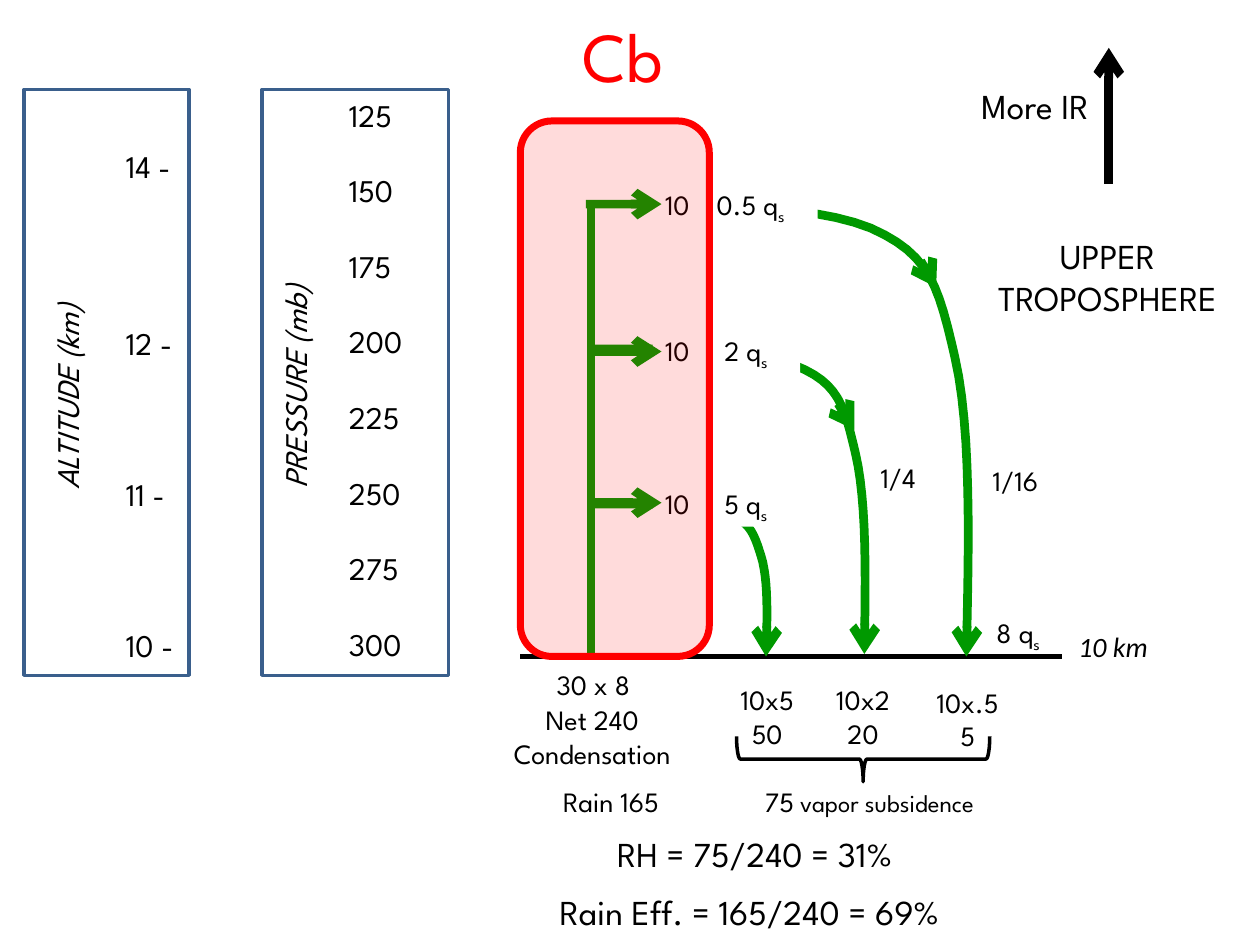
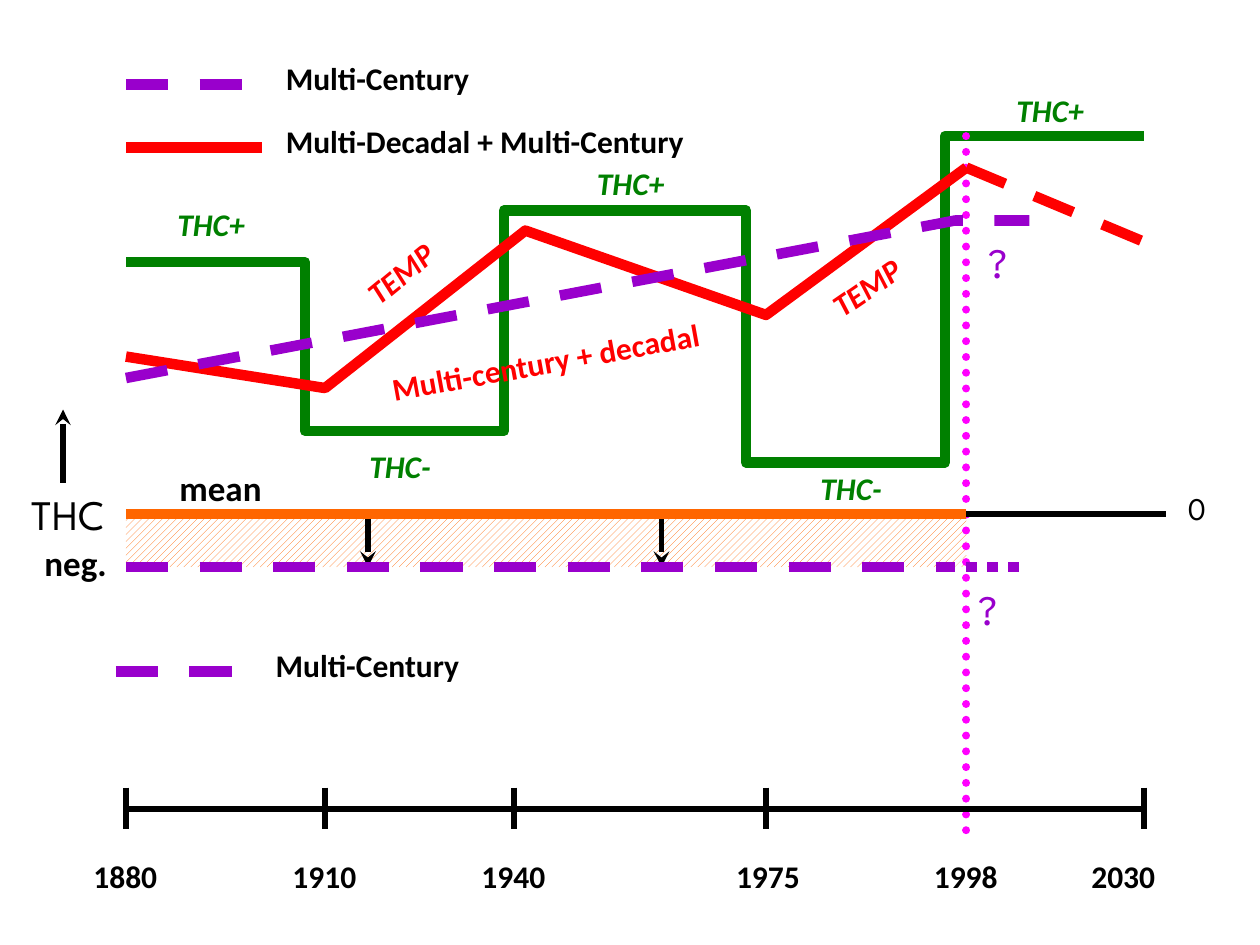
from lxml import etree
from pptx import Presentation
from pptx.dml.color import RGBColor
from pptx.enum import dml, shapes, text
from pptx.oxml.ns import qn
from pptx.util import Cm, Pt

INCH = 2.54
SPARTAN, CALIBRI = "League Spartan", "Calibri"
BLACK, WHITE, RED, GREEN = "000000", "FFFFFF", "FF0000", "009900"
THC_GREEN, PURPLE, ORANGE, PINK, FRAME_BLUE = "008000", "9900CC", "FF6600", "FF00FF", "3A5F8C"
DASH, DOT = dml.MSO_LINE.DASH, dml.MSO_LINE.ROUND_DOT
LEFT, CENTER = text.PP_ALIGN.LEFT, text.PP_ALIGN.CENTER
rgb = RGBColor.from_string


def add_label(page, frame, words, size=16, colour=BLACK, font=SPARTAN, align=CENTER,
              bold=False, italic=False, fill=None, turn=0, gaps=(), tab=None):
    """Place text given in inches; newline splits paragraphs, "_" starts a subscript."""
    box = page.shapes.add_textbox(*[Cm(v * INCH) for v in frame])
    box.rotation = turn
    if fill:
        box.fill.solid()
        box.fill.fore_color.rgb = rgb(fill)
    box.text_frame.word_wrap = True
    box.text_frame.auto_size = text.MSO_AUTO_SIZE.SHAPE_TO_FIT_TEXT
    for row, line in enumerate(words.split("\n")):
        para = box.text_frame.add_paragraph() if row else box.text_frame.paragraphs[0]
        para.alignment = align
        if row and gaps:
            para.space_before = Pt(gaps[row - 1])
        if tab:
            stops = etree.SubElement(para._p.get_or_add_pPr(), qn("a:tabLst"))
            etree.SubElement(stops, qn("a:tab"), pos=str(Cm(tab * INCH)), algn="l")
        main, _, subscript = line.partition("_")
        para.add_run().text = main
        if subscript:
            span = para.add_run()
            span.text = subscript
            span.font._element.set("baseline", "-25000")
        para.font.name, para.font.size = font, Pt(size)
        para.font.bold, para.font.italic = bold, italic
        para.font.color.rgb = rgb(colour)
    return box


def draw(page, points, colour, width, dash=None, arrow=None, cap=None):
    """Draw a connector for two points in inches, an open outline for more."""
    spots = [(Cm(x * INCH), Cm(y * INCH)) for x, y in points]
    if len(spots) == 2:
        stroke = page.shapes.add_connector(shapes.MSO_CONNECTOR.STRAIGHT, *spots[0], *spots[1])
    else:
        builder = page.shapes.build_freeform(*spots[0])
        builder.add_line_segments(spots[1:], close=False)
        stroke = builder.convert_to_shape()
        stroke.fill.background()
    stroke.line.color.rgb = rgb(colour)
    stroke.line.width = Pt(width)
    if dash:
        stroke.line.dash_style = dash
    props = stroke._element.spPr
    outline = props.find(qn("a:ln"))
    if arrow:
        etree.SubElement(outline, qn("a:tailEnd"), type=arrow)
    if cap:
        outline.set("cap", cap)
    etree.SubElement(props, qn("a:effectLst"))


deck = Presentation()
deck.slide_width, deck.slide_height = Cm(25.4), Cm(19.05)
blank = deck.slide_layouts[6]

# Slide 1: cumulonimbus moisture budget
page = deck.slides.add_slide(blank)

add_label(page, (2.67, 0.71, 0.75, 4.64), "\n".join(str(mb) for mb in range(125, 301, 25)),
          18, align=LEFT, gaps=[21.6] * 7)
add_label(page, (0.9, 1.12, 0.75, 4.34), "14 -\n12 -\n11 -\n10 -", 18, align=LEFT,
          gaps=[79.2, 64.8, 64.8])
for left, top, name in [(1.22, 2.65, "PRESSURE (mb)"), (-0.59, 2.66, "ALTITUDE (km)")]:
    add_label(page, (left, top, 2.25, 0.4), name, 18, align=LEFT, italic=True, turn=270)

draw(page, [(4.13, 5.21), (8.43, 5.21)], BLACK, 3)
draw(page, [(4.69, 5.21), (4.69, 1.62)], GREEN, 5)

# Each sinking path: a start point, then Bezier triples
sinking_paths = [
    [(4.71, 2.77), (5.34, 2.77), (5.97, 2.76), (6.31, 2.9), (6.66, 3.04), (6.7, 3.22),
     (6.79, 3.6), (6.88, 3.98), (6.87, 4.58), (6.86, 5.19)],
    [(4.65, 1.62), (5.53, 1.62), (6.42, 1.61), (6.91, 1.81), (7.39, 2.02), (7.45, 2.28),
     (7.58, 2.84), (7.71, 3.41), (7.69, 4.31), (7.67, 5.21)],
    [(4.7, 4), (5.1, 4), (5.51, 3.99), (5.73, 4.06), (5.95, 4.13), (5.98, 4.22),
     (6.04, 4.41), (6.1, 4.6), (6.09, 4.9), (6.08, 5.21)],
]
STEPS = 12
for knots in sinking_paths:
    curve = [knots[0]]
    for first in range(0, len(knots) - 1, 3):
        corners = knots[first:first + 4]
        for step in range(1, STEPS + 1):
            t = step / STEPS
            weights = ((1 - t) ** 3, 3 * t * (1 - t) ** 2, 3 * t * t * (1 - t), t ** 3)
            curve.append(tuple(sum(w * c[axis] for w, c in zip(weights, corners))
                               for axis in (0, 1)))
    draw(page, curve, GREEN, 5, arrow="arrow")

for top, width, outflow, tab in [(1.44, 1.31, "0.5", 0.41), (2.6, 1.17, "2", 0.47),
                                 (3.81, 1.17, "5", 0.47)]:
    add_label(page, (5.18, top, width, 0.37), f"10\t{outflow} q_s", align=LEFT, fill=WHITE, tab=tab)

for frame, words, size in [
    ((5.61, 5.37, 0.96, 0.64), "10x5\n50", 16),
    ((6.37, 5.37, 0.96, 0.64), "10x2\n20", 16),
    ((7.2, 5.39, 0.96, 0.64), "10x.5\n5", 16),
    ((4.23, 5.25, 0.96, 0.37), "30 x 8", 16),
    ((4.06, 6.18, 1.58, 0.37), "Rain 165", 16),
    ((4.13, 6.56, 3.72, 0.44), "RH = 75/240 = 31%", 20),
    ((4.05, 7.02, 3.8, 0.44), "Rain Eff. = 165/240 = 69%", 20),
]:
    add_label(page, frame, words, size, fill=WHITE)

add_label(page, (4.38, 0.05, 1.12, 0.77), "Cb", 40, RED)
add_label(page, (3.69, 5.53, 2.02, 0.64), "Net 240 Condensation")
add_label(page, (7.62, 0.62, 1.19, 0.77), "More IR", 20)
add_label(page, (7.58, 1.81, 2.42, 0.77), "UPPER TROPOSPHERE", 20)
subsidence = add_label(page, (5.64, 6.18, 2.52, 0.37), "75")
span = subsidence.text_frame.paragraphs[0].add_run()
span.text = " vapor subsidence"
span.font.size = Pt(14)
for frame, words in [((7.81, 4.84, 0.83, 0.37), "8 q_s"), ((6.89, 3.61, 0.61, 0.37), "1/4"),
                     ((7.78, 3.63, 0.78, 0.37), "1/16")]:
    add_label(page, frame, words, align=LEFT)
add_label(page, (8.46, 4.95, 1.06, 0.37), "10 km", font=CALIBRI, align=LEFT, italic=True)

for level in (1.62, 2.79, 3.99):
    draw(page, [(4.69, level), (5.25, level)], GREEN, 5, arrow="arrow")

PRESET = shapes.MSO_SHAPE
for preset, frame, colour, width in [
    (PRESET.RIGHT_BRACE, (6.67, 5.02, 0.36, 2.01), BLACK, 2),
    (PRESET.RECTANGLE, (0.19, 0.71, 1.31, 4.65), FRAME_BLUE, 2),
    (PRESET.RECTANGLE, (2.08, 0.71, 1.48, 4.65), FRAME_BLUE, 2),
    (PRESET.ROUNDED_RECTANGLE, (4.13, 0.96, 1.5, 4.25), RED, 4),
]:
    shape = page.shapes.add_shape(preset, *[Cm(v * INCH) for v in frame])
    shape.shadow.inherit = False
    shape.fill.background()
    shape.line.color.rgb = rgb(colour)
    shape.line.width = Pt(width)
    if preset == PRESET.RIGHT_BRACE:
        shape.rotation = 90
    elif preset == PRESET.ROUNDED_RECTANGLE:
        shape.fill.solid()
        shape.fill.fore_color.rgb = rgb(RED)
        tint = shape._element.spPr.find(qn("a:solidFill"))[0]
        etree.SubElement(tint, qn("a:alpha"), val="14000")

draw(page, [(7.33, 2.11), (7.43, 2.28)], GREEN, 5, arrow="arrow")
draw(page, [(6.68, 3.25), (6.78, 3.41)], GREEN, 5, arrow="arrow")
draw(page, [(8.8, 1.46), (8.8, 0.38)], BLACK, 5, arrow="arrow")

# Slide 2: THC and temperature timeline
page = deck.slides.add_slide(blank)

draw(page, [(1, 2.08), (2.42, 2.08), (2.42, 3.42), (4, 3.42), (4, 1.67), (5.92, 1.67),
            (5.92, 3.67), (7.5, 3.67), (7.5, 1.08), (9.08, 1.08)], THC_GREEN, 6)

deficit = page.shapes.add_shape(PRESET.RECTANGLE, *[Cm(v * INCH) for v in (1, 4.08, 6.67, 0.42)])
deficit.shadow.inherit = False
deficit.fill.patterned()
deficit.fill.pattern = dml.MSO_PATTERN.WIDE_UPWARD_DIAGONAL
deficit.fill.fore_color.rgb = rgb(ORANGE)
deficit.fill.back_color.rgb = rgb(WHITE)
deficit.line.fill.background()

draw(page, [(7.67, 1.08), (7.67, 6.67)], PINK, 4.5, DOT, cap="rnd")
draw(page, [(1, 6.42), (9.08, 6.42)], BLACK, 3)
for tick in (1, 2.58, 4.08, 6.08, 9.08):
    draw(page, [(tick, 6.25), (tick, 6.58)], BLACK, 3)
for middle, year in [(1, 1880), (2.58, 1910), (4.08, 1940), (6.1, 1975), (7.67, 1998), (8.92, 2030)]:
    add_label(page, (middle - 0.42, 6.75, 0.83, 0.4), str(year), 18, font=CALIBRI, bold=True)

for left, top, width, colour, dash, name in [
    (1, 0.67, 1.83, PURPLE, DASH, "Multi-Century"),
    (1, 1.17, 3.83, RED, None, "Multi-Decadal + Multi-Century"),
    (0.92, 5.33, 1.83, PURPLE, DASH, "Multi-Century"),
]:
    draw(page, [(left, top), (left + 1.08, top)], colour, 6, dash)
    add_label(page, (left + 1.17, top - 0.25, width, 0.4), name, 18,
              font=CALIBRI, align=LEFT, bold=True)

draw(page, [(7.67, 4.5), (8.17, 4.5)], PURPLE, 6, DOT)
draw(page, [(7.67, 4.08), (9.25, 4.08)], BLACK, 3)
draw(page, [(1, 2.83), (2.58, 3.08), (4.17, 1.83), (6.08, 2.5), (7.67, 1.33)], RED, 6)
for start, end in [((2.92, 4.08), (2.92, 4.5)), ((5.25, 4.08), (5.25, 4.5)),
                   ((0.5, 3.83), (0.5, 3.25))]:
    draw(page, [start, end], BLACK, 3, arrow="stealth")
draw(page, [(1, 4.5), (7.58, 4.5)], PURPLE, 6, DASH)
draw(page, [(1, 4.08), (7.67, 4.08)], ORANGE, 6)
draw(page, [(1, 3), (7.58, 1.75), (8.17, 1.75)], PURPLE, 6, DASH)
draw(page, [(7.67, 1.33), (9.08, 1.92)], RED, 6, DASH)

add_label(page, (9.33, 3.83, 0.33, 0.4), "0", 18, align=LEFT)
add_label(page, (0.08, 3.83, 0.92, 0.5), "THC", 24)
for left, top in [(7.75, 1.83), (7.67, 4.58)]:
    add_label(page, (left, top, 0.42, 0.5), "?", 24, PURPLE, align=LEFT)
for frame, words in [((1.25, 3.65, 1, 0.43), "mean"), ((0.18, 4.25, 0.84, 0.43), "neg.")]:
    add_label(page, frame, words, 20, font=CALIBRI, bold=True)
for frame, words, italic, turn in [
    ((6.25, 2.08, 1.25, 0.4), "TEMP", True, 325.5),
    ((2.67, 1.97, 1.01, 0.4), "TEMP", True, 320.6),
    ((2.83, 2.67, 3, 0.4), "Multi-century + decadal", False, 349.7),
]:
    add_label(page, frame, words, 18, RED, CALIBRI, bold=True, italic=italic, turn=turn)
for left, top, sign in [(1.17, 1.58, "+"), (4.5, 1.25, "+"), (7.83, 0.67, "+"),
                        (2.67, 3.5, "-"), (6.25, 3.67, "-")]:
    add_label(page, (left, top, 1.01, 0.4), "THC" + sign, 18, THC_GREEN, CALIBRI,
              bold=True, italic=True)

deck.save("out.pptx")
